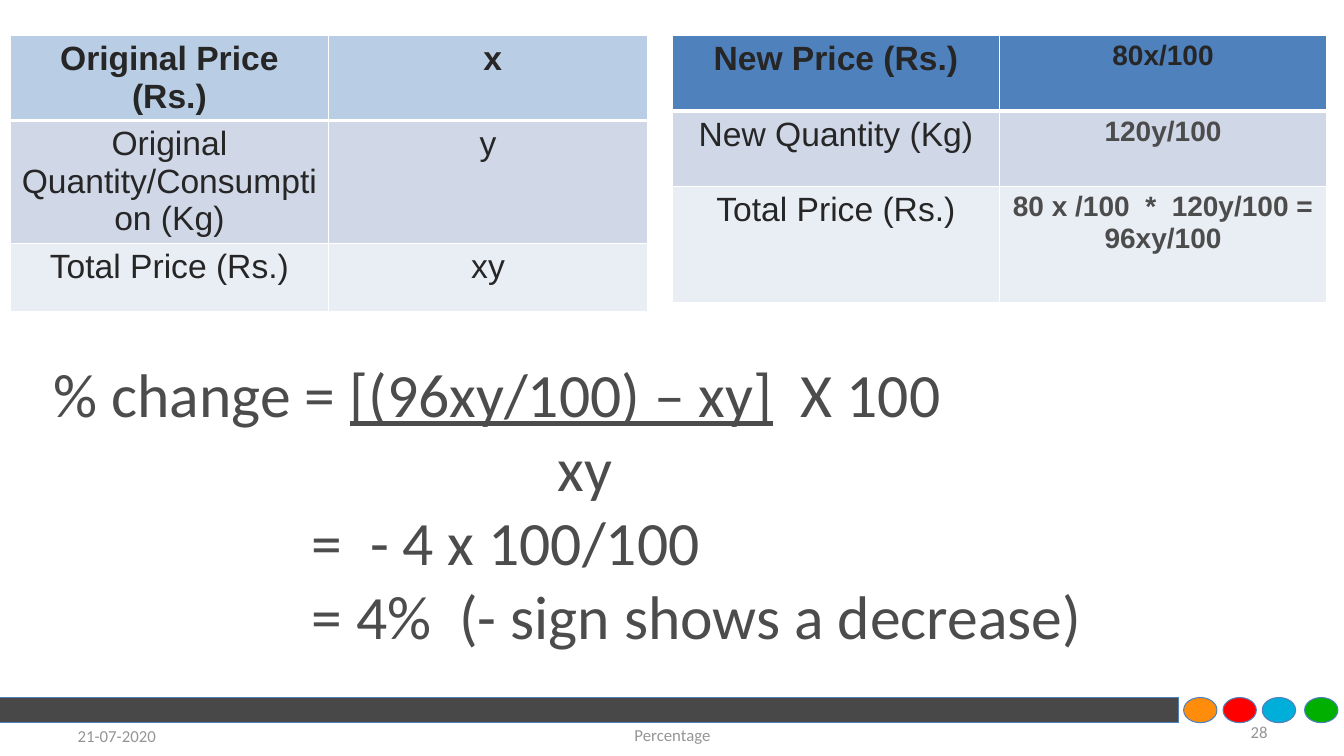
from dataclasses import dataclass

from lxml.etree import SubElement
from pptx import Presentation
from pptx.dml.color import RGBColor
from pptx.enum.shapes import MSO_SHAPE
from pptx.enum.text import MSO_ANCHOR, MSO_AUTO_SIZE, PP_ALIGN
from pptx.oxml.ns import qn
from pptx.slide import Slide
from pptx.table import _Cell
from pptx.text.text import _Paragraph
from pptx.util import Emu, Inches, Pt

SLIDE_WIDTH = Inches(13.33)
SLIDE_HEIGHT = Inches(7.5)

COLOURS = {
    "white": "FFFFFF",
    "bar": "484848",
    "blue": "4F81BD",
    "pale blue": "B9CDE5",
    "band": "D0D8E8",
    "light band": "E9EDF4",
    "dark": "262626",
    "grey": "4C4C4C",
    "footer": "959595",
    "orange": "FF8C0B",
    "red": "FF0000",
    "cyan": "00AEDA",
    "green": "00AF00",
}


@dataclass(frozen=True)
class Box:
    """Shares of the slide's size, in percent."""
    left: float
    top: float
    width: float
    height: float

    def place(self) -> tuple[Emu, Emu, Emu, Emu]:
        return (across(self.left), down(self.top),
                across(self.width), down(self.height))


@dataclass(frozen=True)
class Style:
    size: float
    font: str
    colour: str
    bold: bool = False
    underline: bool = False


@dataclass(frozen=True)
class Entry:
    text: str
    style: Style


@dataclass(frozen=True)
class PriceTable:
    left: float
    columns: tuple[float, ...]
    rows: tuple[float, ...]
    header_fill: str
    entries: tuple[tuple[Entry, Entry], ...]


@dataclass(frozen=True)
class Ornament:
    preset: MSO_SHAPE
    left: float
    width: float
    fill: str


@dataclass(frozen=True)
class FooterItem:
    text: str
    box: Box
    alignment: PP_ALIGN


@dataclass(frozen=True)
class FormulaLine:
    margin: float
    entries: tuple[Entry, ...]


HEADING = Style(24, "Arial", "dark", bold=True)
SMALL_HEADING = Style(20, "Arial", "dark", bold=True)
LABEL = Style(24, "Arial", "dark")
RESULT = Style(20, "Arial", "grey", bold=True)
FORMULA = Style(44, "Calibri", "grey")
NUMERATOR = Style(44, "Calibri", "grey", underline=True)
FOOTER = Style(12, "Calibri", "footer")

TABLE_TOP = 4.67
ORNAMENT_TOP = 92.27
ORNAMENT_HEIGHT = 3.33
DOT_WIDTH = 2.48

TABLES = (
    PriceTable(0.75, (23.71, 23.71), (9.07, 16.27, 9.07), "pale blue", (
        (Entry("Original Price (Rs.)", HEADING), Entry(" x", HEADING)),
        (Entry("Original Quantity/Consumption (Kg)", LABEL), Entry("y", LABEL)),
        (Entry("Total Price (Rs.)", LABEL), Entry("xy", LABEL)),
    )),
    PriceTable(50.04, (24.31, 24.38), (10, 10, 15.33), "blue", (
        (Entry("New Price (Rs.)", HEADING), Entry("80x/100", SMALL_HEADING)),
        (Entry("New Quantity (Kg)", LABEL), Entry("120y/100", RESULT)),
        (Entry("Total Price (Rs.)", LABEL),
         Entry("80 x /100  *  120y/100 = 96xy/100", RESULT)),
    )),
)

ORNAMENTS = (
    Ornament(MSO_SHAPE.RECTANGLE, 0, 87.7, "bar"),
    Ornament(MSO_SHAPE.OVAL, 88.07, DOT_WIDTH, "orange"),
    Ornament(MSO_SHAPE.OVAL, 91, DOT_WIDTH, "red"),
    Ornament(MSO_SHAPE.OVAL, 93.92, DOT_WIDTH, "cyan"),
    Ornament(MSO_SHAPE.OVAL, 97.07, DOT_WIDTH, "green"),
)

FOOTER_ITEMS = (
    FooterItem("21-07-2020", Box(5.03, 94.67, 23.33, 5.33), PP_ALIGN.LEFT),
    FooterItem("Percentage", Box(34.21, 94.53, 31.66, 5.33), PP_ALIGN.CENTER),
    FooterItem("28", Box(71.72, 94.13, 23.33, 5.33), PP_ALIGN.RIGHT),
)

FORMULA_BOX = Box(3.23, 43.47, 90.02, 46.27)
FORMULA_LINES = (
    FormulaLine(0, (Entry("% change = ", FORMULA),
                    Entry("[(96xy/100) – xy]", NUMERATOR),
                    Entry("  X 100", FORMULA))),
    FormulaLine(37.51, (Entry("xy", FORMULA),)),
    FormulaLine(19.2, (Entry("=  - 4 x 100/100", FORMULA),)),
    FormulaLine(19.2, (Entry("= 4%  (- sign shows a decrease)", FORMULA),)),
)


def across(percent: float) -> Emu:
    return Emu(round(SLIDE_WIDTH * percent / 100))


def down(percent: float) -> Emu:
    return Emu(round(SLIDE_HEIGHT * percent / 100))


def colour(name: str) -> RGBColor:
    return RGBColor.from_string(COLOURS[name])


def add_run(paragraph: _Paragraph, entry: Entry) -> None:
    run = paragraph.add_run()
    run.text = entry.text
    font = run.font
    font.size = Pt(entry.style.size)
    font.name = entry.style.font
    font.bold = entry.style.bold
    font.underline = entry.style.underline
    font.color.rgb = colour(entry.style.colour)


def add_ornament(slide: Slide, ornament: Ornament) -> None:
    box = Box(ornament.left, ORNAMENT_TOP, ornament.width, ORNAMENT_HEIGHT)
    shape = slide.shapes.add_shape(ornament.preset, *box.place())
    shape.shadow.inherit = False
    shape.fill.solid()
    shape.fill.fore_color.rgb = colour(ornament.fill)
    shape.line.color.rgb = colour("blue")
    shape.line.width = Pt(0.75)


def write_formula(slide: Slide) -> None:
    title = slide.shapes.title
    title.left, title.top, title.width, title.height = FORMULA_BOX.place()
    frame = title.text_frame
    frame.word_wrap = True
    frame.auto_size = MSO_AUTO_SIZE.NONE
    frame.vertical_anchor = MSO_ANCHOR.MIDDLE
    for index, line in enumerate(FORMULA_LINES):
        paragraph = frame.add_paragraph() if index else frame.paragraphs[0]
        paragraph.alignment = PP_ALIGN.LEFT
        properties = paragraph._p.get_or_add_pPr()
        properties.set("marL", str(across(line.margin)))
        properties.set("indent", "0")
        for entry in line.entries:
            add_run(paragraph, entry)


def format_cell(cell: _Cell, entry: Entry, fill: str, bottom: float) -> None:
    properties = cell._tc.get_or_add_tcPr()
    for side, width in (("L", 1), ("R", 1), ("T", 1), ("B", bottom)):
        border = SubElement(properties, qn(f"a:ln{side}"), w=str(Pt(width)))
        solid = SubElement(border, qn("a:solidFill"))
        SubElement(solid, qn("a:srgbClr"), val=COLOURS["white"])
    cell.fill.solid()
    cell.fill.fore_color.rgb = colour(fill)
    paragraph = cell.text_frame.paragraphs[0]
    paragraph.alignment = PP_ALIGN.CENTER
    add_run(paragraph, entry)


def add_price_table(slide: Slide, prices: PriceTable) -> None:
    box = Box(prices.left, TABLE_TOP, sum(prices.columns), sum(prices.rows))
    table = slide.shapes.add_table(
        len(prices.rows), len(prices.columns), *box.place()).table
    for column, width in zip(table.columns, prices.columns):
        column.width = across(width)
    fills = (prices.header_fill, "band", "light band")
    for index, (height, fill) in enumerate(zip(prices.rows, fills)):
        table.rows[index].height = down(height)
        for cell, entry in zip(table.rows[index].cells, prices.entries[index]):
            format_cell(cell, entry, fill, 1 if index else 3)


def add_footer_item(slide: Slide, item: FooterItem) -> None:
    frame = slide.shapes.add_textbox(*item.box.place()).text_frame
    frame.word_wrap = True
    frame.vertical_anchor = MSO_ANCHOR.MIDDLE
    frame.paragraphs[0].alignment = item.alignment
    add_run(frame.paragraphs[0], Entry(item.text, FOOTER))


def main() -> None:
    presentation = Presentation()
    presentation.slide_width = SLIDE_WIDTH
    presentation.slide_height = SLIDE_HEIGHT
    slide = presentation.slides.add_slide(presentation.slide_layouts[5])
    for ornament in ORNAMENTS:
        add_ornament(slide, ornament)
    write_formula(slide)
    for prices in TABLES:
        add_price_table(slide, prices)
    for item in FOOTER_ITEMS:
        add_footer_item(slide, item)
    presentation.save("out.pptx")


if __name__ == "__main__":
    main()
